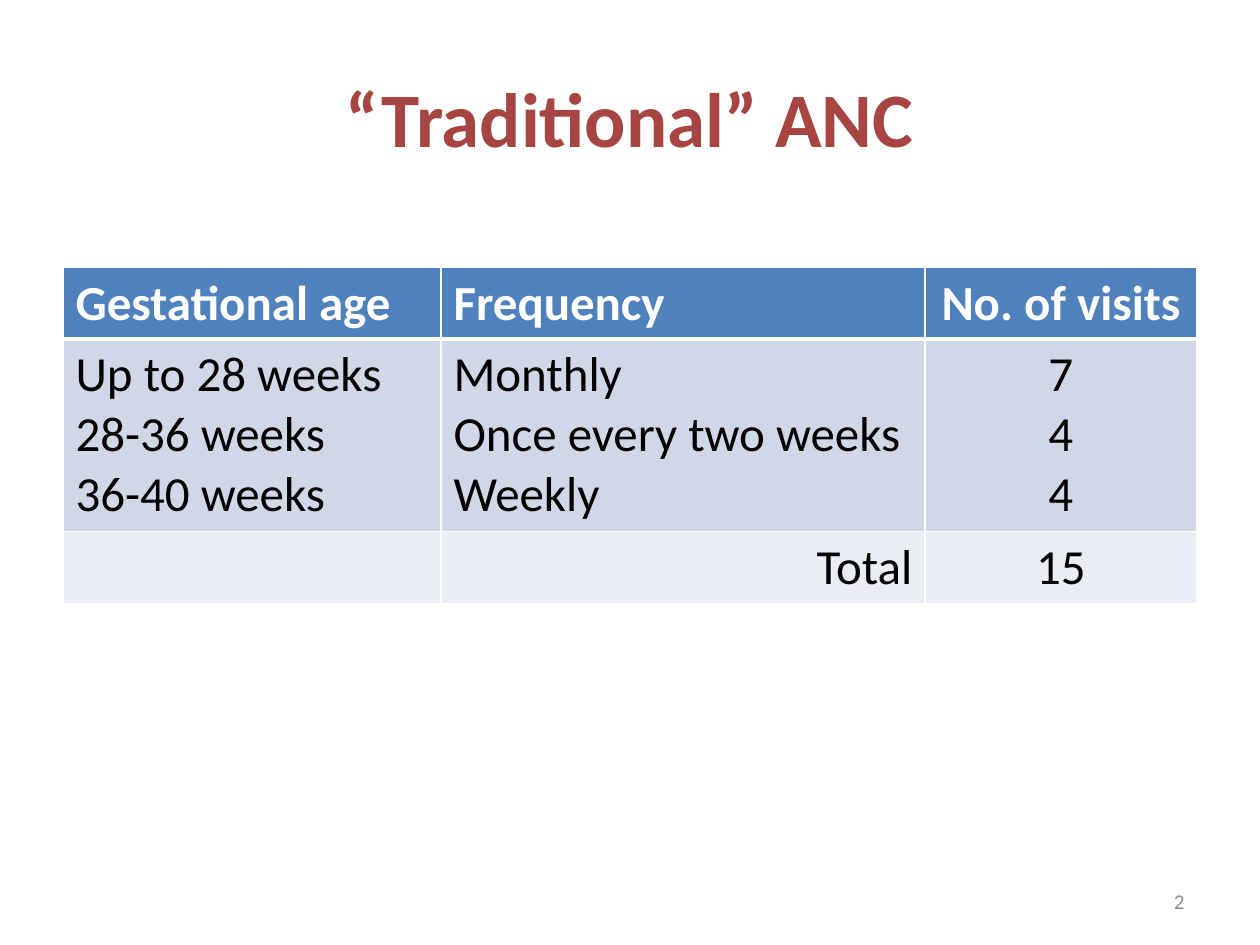
from dataclasses import dataclass

from lxml import etree
from pptx import Presentation
from pptx.dml.color import RGBColor
from pptx.enum.text import MSO_ANCHOR, PP_ALIGN
from pptx.oxml.ns import qn
from pptx.util import Inches, Pt

LEFT, CENTER, RIGHT = PP_ALIGN.LEFT, PP_ALIGN.CENTER, PP_ALIGN.RIGHT
MIDDLE = MSO_ANCHOR.MIDDLE
FONT = "Calibri"
COLORS = {
    "title": "A74543",
    "header": "4F81BD",
    "visits": "D0D8E8",
    "total": "E9EDF4",
    "white": "FFFFFF",
    "black": "000000",
    "number": "8C8C8C",
}


@dataclass(frozen=True)
class TextStyle:
    size: int
    color: str
    bold: bool = False


@dataclass(frozen=True)
class Label:
    text: str
    left: float
    top: float
    width: float
    height: float
    align: PP_ALIGN
    style: TextStyle


@dataclass(frozen=True)
class TableRow:
    height: float
    fill: str
    style: TextStyle
    texts: tuple[str, ...]
    aligns: tuple[PP_ALIGN, ...] = (LEFT, LEFT, CENTER)
    bottom_border: int = 1


HEADER_STYLE = TextStyle(28, "white", True)
BODY_STYLE = TextStyle(28, "black")
LABELS = (
    Label("“Traditional” ANC", 0.5, 0.3, 9, 1.25, CENTER, TextStyle(44, "title", True)),
    Label("2", 7.17, 6.95, 2.33, 0.4, RIGHT, TextStyle(12, "number")),
)
COLUMN_WIDTHS = (3, 3.84, 2.16)
ROWS = (
    TableRow(0.57, "header", HEADER_STYLE,
             ("Gestational age", "Frequency", "No. of visits"), bottom_border=3),
    TableRow(1.53, "visits", BODY_STYLE,
             ("Up to 28 weeks\n28-36 weeks\n36-40 weeks",
              "Monthly\nOnce every two weeks\nWeekly", "7\n4\n4")),
    TableRow(0.57, "total", BODY_STYLE, ("", "Total", "15"), (LEFT, RIGHT, CENTER)),
)


def write_text(frame, text: str, align: PP_ALIGN, style: TextStyle) -> None:
    for index, line in enumerate(text.split("\n")):
        para = frame.add_paragraph() if index else frame.paragraphs[0]
        para.alignment = align
        if line:
            span = para.add_run()
            span.text = line
            span.font.name = FONT
            span.font.size = Pt(style.size)
            span.font.bold = style.bold
            span.font.color.rgb = RGBColor.from_string(COLORS[style.color])


def add_label(page, label: Label) -> None:
    box = page.shapes.add_textbox(
        Inches(label.left), Inches(label.top), Inches(label.width), Inches(label.height))
    frame = box.text_frame
    frame.word_wrap = True
    frame.vertical_anchor = MIDDLE
    write_text(frame, label.text, label.align, label.style)


def set_borders(cell, top: int, bottom: int) -> None:
    properties = cell._tc.get_or_add_tcPr()
    for side, width in (("L", 1), ("R", 1), ("T", top), ("B", bottom)):
        line = etree.SubElement(properties, qn(f"a:ln{side}"), w=str(Pt(width)))
        fill = etree.SubElement(line, qn("a:solidFill"))
        etree.SubElement(fill, qn("a:srgbClr"), val=COLORS["white"])


def add_visits_table(page) -> None:
    table = page.shapes.add_table(
        len(ROWS), len(COLUMN_WIDTHS), Inches(0.5), Inches(2.12),
        Inches(sum(COLUMN_WIDTHS)), Inches(sum(row.height for row in ROWS))).table
    for column, width in zip(table.columns, COLUMN_WIDTHS):
        column.width = Inches(width)
    top_border = 1
    for table_row, row in zip(table.rows, ROWS):
        table_row.height = Inches(row.height)
        for cell, text, align in zip(table_row.cells, row.texts, row.aligns):
            set_borders(cell, top_border, row.bottom_border)
            cell.fill.solid()
            cell.fill.fore_color.rgb = RGBColor.from_string(COLORS[row.fill])
            write_text(cell.text_frame, text, align, row.style)
        top_border = row.bottom_border


def main() -> None:
    deck = Presentation()
    deck.slide_width = Inches(10)
    deck.slide_height = Inches(7.5)
    page = deck.slides.add_slide(deck.slide_layouts[6])
    for label in LABELS:
        add_label(page, label)
    add_visits_table(page)
    deck.save("out.pptx")


if __name__ == "__main__":
    main()
